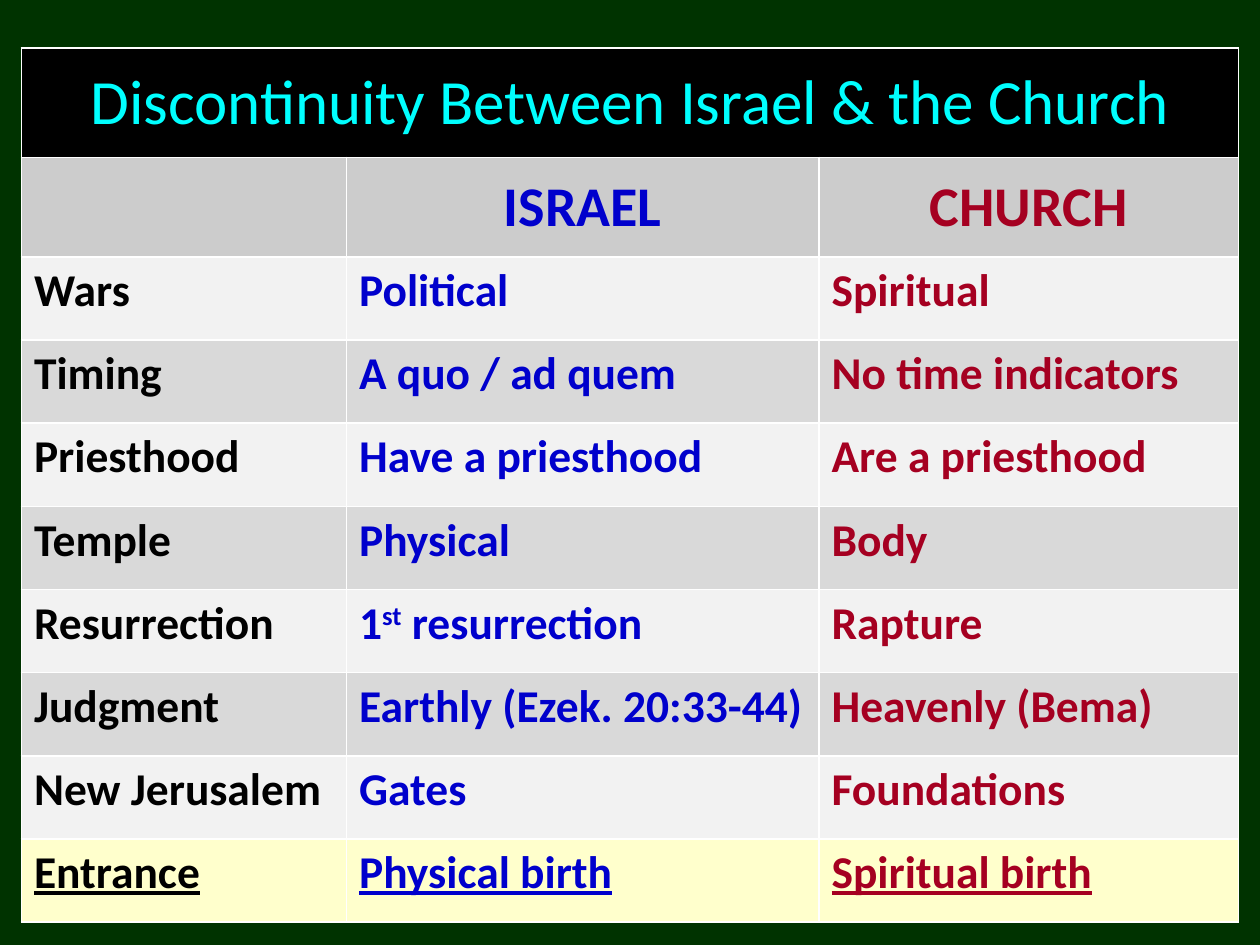
from lxml.etree import SubElement
from pptx import Presentation
from pptx.dml.color import RGBColor
from pptx.enum.text import MSO_ANCHOR, PP_ALIGN
from pptx.oxml.ns import qn
from pptx.util import Inches, Pt

COLORS = {
    "background": "003300", "border": "FFFFFF", "title": "00FFFF",
    "title_fill": "000000", "header_fill": "CCCCCC", "light": "F2F2F2",
    "dark": "D9D9D9", "highlight": "FFFFCC",
    "topic": "000000", "israel": "0000CC", "church": "A50021",
}
COLUMNS = ["topic", "israel", "church"]
COLUMN_WIDTHS = [2.58, 3.75, 3.33]
ROW_HEIGHTS = [0.87, 0.79] + [0.66] * 8
HEADERS = ["", "ISRAEL", "CHURCH"]
# Text between carets is superscript.
CONTRASTS = [
    ("Wars", "Political", "Spiritual"),
    ("Timing", "A quo / ad quem", "No time indicators"),
    ("Priesthood", "Have a priesthood", "Are a priesthood"),
    ("Temple", "Physical", "Body"),
    ("Resurrection", "1^st^ resurrection", "Rapture"),
    ("Judgment", "Earthly (Ezek. 20:33-44)", "Heavenly (Bema)"),
    ("New Jerusalem", "Gates", "Foundations"),
    ("Entrance", "Physical birth", "Spiritual birth"),
]


def style_cell(cell, fill):
    """Give a cell thin borders on all sides and a solid fill."""
    properties = cell._tc.get_or_add_tcPr()
    for side in ("lnL", "lnR", "lnT", "lnB"):
        line = SubElement(properties, qn(f"a:{side}"), w=str(Pt(1)))
        solid = SubElement(line, qn("a:solidFill"))
        SubElement(solid, qn("a:srgbClr"), val=COLORS["border"])
    cell.fill.solid()
    cell.fill.fore_color.rgb = RGBColor.from_string(COLORS[fill])


def write_cell(cell, text, color, size=26, bold=True, underline=False,
               heading=False):
    """Write formatted text, centred when it is a heading."""
    para = cell.text_frame.paragraphs[0]
    if heading:
        cell.vertical_anchor = MSO_ANCHOR.MIDDLE
        para.alignment = PP_ALIGN.CENTER
        para.space_before = Pt(round(size * 0.2))
    else:
        para.space_before = para.space_after = Pt(6)
    for index, part in enumerate(text.split("^")):
        span = para.add_run()
        span.text = part
        span.font.name = "Calibri"
        span.font.size = Pt(size)
        span.font.bold = bold
        span.font.underline = underline
        span.font.color.rgb = RGBColor.from_string(COLORS[color])
        if index % 2:
            span._r.get_or_add_rPr().set("baseline", "30000")


deck = Presentation()
deck.slide_width, deck.slide_height = Inches(10), Inches(7.5)
page = deck.slides.add_slide(deck.slide_layouts[6])
page.background.fill.solid()
page.background.fill.fore_color.rgb = RGBColor.from_string(COLORS["background"])

table = page.shapes.add_table(
    len(ROW_HEIGHTS), len(COLUMNS), Inches(0.17), Inches(0.38),
    Inches(sum(COLUMN_WIDTHS)), Inches(sum(ROW_HEIGHTS))).table
table.first_row = table.horz_banding = False
for column, width in zip(table.columns, COLUMN_WIDTHS):
    column.width = Inches(width)
for row, height in zip(table.rows, ROW_HEIGHTS):
    row.height = Inches(height)

bands = ["light", "dark"] * 4
bands[-1] = "highlight"
for row, fill in zip(table.rows, ["title_fill", "header_fill"] + bands):
    for cell in row.cells:
        style_cell(cell, fill)

title = table.cell(0, 0)
title.merge(table.cell(0, 2))
write_cell(title, "Discontinuity Between Israel & the Church", "title",
           size=36, bold=False, heading=True)

for column, (text, color) in enumerate(zip(HEADERS, COLUMNS)):
    if text:
        write_cell(table.cell(1, column), text, color, size=32, heading=True)

for row, contrast in enumerate(CONTRASTS, start=2):
    for column, (text, color) in enumerate(zip(contrast, COLUMNS)):
        write_cell(table.cell(row, column), text, color,
                   underline=contrast[0] == "Entrance")

deck.save("out.pptx")
